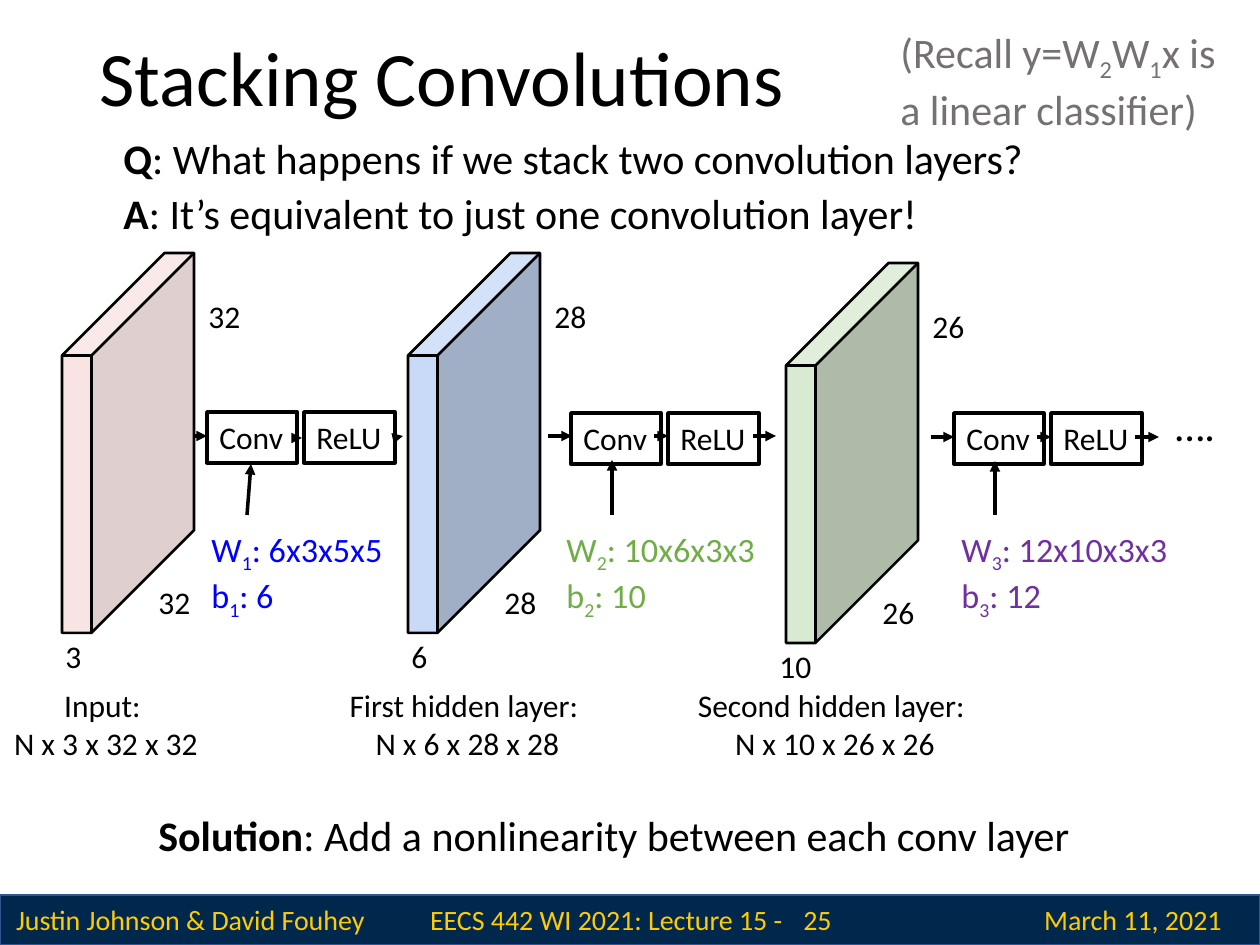
from collections import namedtuple
from dataclasses import dataclass

from pptx import Presentation
from pptx.dml.color import RGBColor as RGB
from pptx.enum.shapes import MSO_CONNECTOR as Connector, MSO_SHAPE as Preset
from pptx.enum.text import MSO_ANCHOR as Anchor, MSO_AUTO_SIZE as Fit, PP_ALIGN as Align
from pptx.oxml.ns import qn
from pptx.oxml.xmlchemy import OxmlElement
from pptx.util import Emu, Pt


@dataclass(frozen=True)
class Theme:
    font: str = "Calibri"
    ink: str = "000000"
    recall: str = "767171"
    band: str = "00274C"
    band_line: str = "325491"
    maize: str = "FFCB05"
    title: float = 44
    statement: float = 24
    weight: float = 19.5
    label: float = 18
    footer: float = 16


THEME = Theme()
EMU_PER_PX = 914400 / 126

Layer = namedtuple("Layer", "x y size depth depth_dx fill alpha caption caption_x caption_w")
Block = namedtuple("Block", "x y color weight bias weight_x weight_w arrows")

LAYERS = [
    Layer(62, 253, "32", "3", -9, "F4CCCC", 52, ["Input: ", "N x 3 x 32 x 32"], 0, 212),
    Layer(408, 253, "28", "6", -9, "C9DAF8", 100,
          ["First hidden layer: ", "N x 6 x 28 x 28"], 335, 265),
    Layer(786, 263, "26", "10", -19, "D9EAD3", 100,
          ["Second hidden layer: ", "N x 10 x 26 x 26"], 683, 304),
]

BLOCKS = [
    Block(207, 412, "0000FF", "6x3x5x5", "6", 199, 200,
          [(195, 436, 207, 436), (296, 438, 302, 438), (394, 438, 403, 436), (247, 515, 251, 464)]),
    Block(571, 413, "70AD47", "10x6x3x3", "10", 554, 215,
          [(548, 436, 572, 436), (654, 436, 668, 436), (753, 436, 776, 436), (612, 515, 612, 460)]),
    Block(954, 413, "7030A0", "12x10x3x3", "12", 949, 236,
          [(931, 437, 954, 437), (1037, 437, 1051, 437), (1135, 437, 1159, 437), (995, 515, 995, 461)]),
]


def px(*lengths):
    return [Emu(round(length * EMU_PER_PX)) for length in lengths]


def bold(text):
    return text, "bold"


def sub(text):
    return text, "sub"


def write(frame, lines, size=THEME.label, color=THEME.ink, align=Align.LEFT,
          anchor=Anchor.TOP, wrap=True, inset=None, spacing=None):
    frame.word_wrap = wrap
    frame.auto_size = Fit.NONE
    frame.vertical_anchor = anchor
    if inset is not None:
        frame.margin_top, frame.margin_bottom = px(inset, inset)
    for index, line in enumerate(lines):
        paragraph = frame.add_paragraph() if index else frame.paragraphs[0]
        paragraph.alignment = align
        if spacing:
            paragraph.line_spacing = spacing
        for piece in [line] if isinstance(line, str) else line:
            text, style = (piece, "") if isinstance(piece, str) else piece
            run = paragraph.add_run()
            run.text = text
            run.font.name = THEME.font
            run.font.size = Pt(size)
            run.font.bold = style == "bold"
            run.font.color.rgb = RGB.from_string(color)
            if style == "sub":
                run._r.get_or_add_rPr().set("baseline", "-25000")


def add_text(slide, box, lines, **text_format):
    write(slide.shapes.add_textbox(*px(*box)).text_frame, lines, **text_format)


def add_label(slide, x, y, text, **text_format):
    add_text(slide, (x, y, 68, 40), [text], inset=13, **text_format)


def add_outlined(slide, preset, box, line, width, fill=None, alpha=100):
    shape = slide.shapes.add_shape(preset, *px(*box))
    shape.shadow.inherit = False
    if fill:
        shape.fill.solid()
        shape.fill.fore_color.rgb = RGB.from_string(fill)
        if alpha < 100:
            opacity = OxmlElement("a:alpha")
            opacity.set("val", str(alpha * 1000))
            shape._element.spPr.find(qn("a:solidFill"))[0].append(opacity)
    else:
        shape.fill.background()
    shape.line.color.rgb = RGB.from_string(line)
    shape.line.width = Pt(width)
    return shape


def add_arrow(slide, ends):
    arrow = slide.shapes.add_connector(Connector.STRAIGHT, *px(*ends))
    arrow.line.color.rgb = RGB.from_string(THEME.ink)
    arrow.line.width = Pt(2)
    head = OxmlElement("a:tailEnd")
    head.set("type", "triangle")
    arrow.line._get_or_add_ln().append(head)
    arrow._element.spPr.append(OxmlElement("a:effectLst"))


def add_operation(slide, x, y, width, name):
    operation = add_outlined(slide, Preset.RECTANGLE, (x, y, width, 51), THEME.ink, 2)
    write(operation.text_frame, [name], wrap=False)


def add_layer(slide, layer):
    volume = add_outlined(slide, Preset.CUBE, (layer.x, layer.y, 132, 380),
                          THEME.ink, 1.5, layer.fill, layer.alpha)
    volume.adjustments[0] = 0.777
    add_label(slide, layer.x + 84, layer.y + 317, layer.size)
    add_label(slide, layer.x + 134, layer.y + 31, layer.size)
    add_label(slide, layer.x + layer.depth_dx, layer.y + 371, layer.depth)
    add_text(slide, (layer.caption_x, 680, layer.caption_w, 89), layer.caption,
             align=Align.CENTER, wrap=False)


def add_block(slide, number, block):
    add_operation(slide, block.x, block.y, 90, "Conv")
    add_operation(slide, block.x + 97, block.y, 91, "ReLU")
    for ends in block.arrows:
        add_arrow(slide, ends)
    index = sub(str(number))
    add_text(slide, (block.weight_x, 515, block.weight_w, 108),
             [["W", index, f": {block.weight}"], ["b", index, f": {block.bias}"]],
             size=THEME.weight, color=block.color, inset=13)


def add_footer(slide):
    add_outlined(slide, Preset.RECTANGLE, (0, 895, 1260, 50), THEME.band_line, 1, THEME.band)
    for x, width, text in [
        (1, 379, "Justin Johnson & David Fouhey"),
        (410, 399, "EECS 442 WI 2021: Lecture 15 - "),
        (762, 111, "25"),
        (1007, 252, "March 11, 2021"),
    ]:
        add_text(slide, (x, 896, width, 47), [text], size=THEME.footer, color=THEME.maize,
                 align=Align.CENTER, anchor=Anchor.MIDDLE)


def add_title(slide, text):
    title = slide.shapes.title
    title.left, title.top, title.width, title.height = px(87, 25, 1086, 113)
    write(title.text_frame, [text], size=THEME.title, anchor=Anchor.MIDDLE, spacing=0.9)


def main():
    deck = Presentation()
    deck.slide_width, deck.slide_height = px(1260, 945)
    slide = deck.slides.add_slide(deck.slide_layouts[5])
    add_footer(slide)
    add_title(slide, "Stacking Convolutions")
    add_text(slide, (888, 20, 345, 115),
             [["(Recall y=W", sub("2"), "W", sub("1"), "x is a linear classifier)"]],
             size=THEME.statement, color=THEME.recall)
    for x, y, width, lead, rest in [
        (111, 126, 926, "Q", ": What happens if we stack two convolution layers?"),
        (111, 181, 926, "A", ": It’s equivalent to just one convolution layer!"),
        (146, 803, 969, "Solution", ": Add a nonlinearity between each conv layer"),
    ]:
        add_text(slide, (x, y, width, 63), [[bold(lead), rest]], size=THEME.statement)
    for layer in LAYERS:
        add_layer(slide, layer)
    for number, block in enumerate(BLOCKS, 1):
        add_block(slide, number, block)
    add_label(slide, 1163, 387, "….", size=THEME.statement)
    deck.save("out.pptx")


if __name__ == "__main__":
    main()
